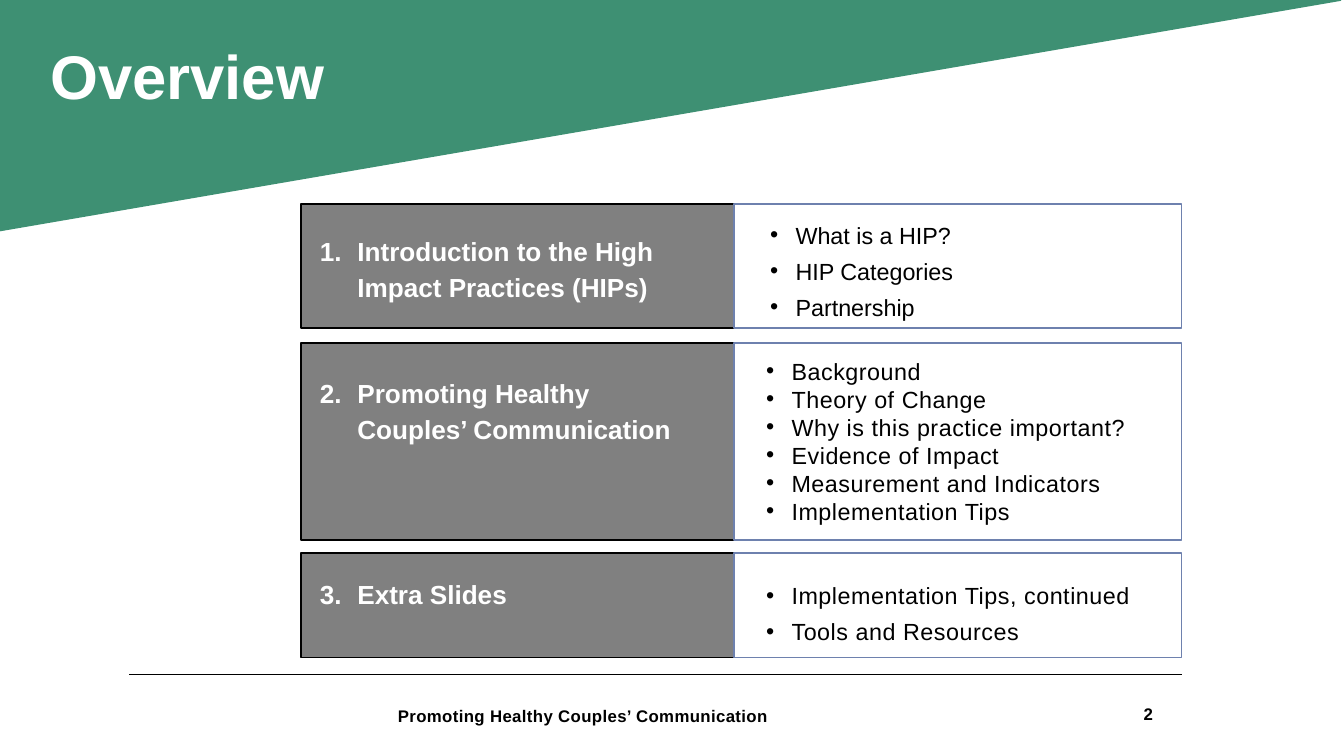
from pptx import Presentation
from pptx.dml.color import RGBColor
from pptx.enum.shapes import MSO_CONNECTOR, MSO_SHAPE
from pptx.enum.text import MSO_ANCHOR, PP_ALIGN
from pptx.oxml.ns import qn
from pptx.util import Cm, Pt
from lxml import etree

GREEN = RGBColor(0x3E, 0x90, 0x73)
GREY = RGBColor(0x80, 0x80, 0x80)
BLUE = RGBColor(0x6E, 0x81, 0xAE)
WHITE = RGBColor(0xFF, 0xFF, 0xFF)
BLACK = RGBColor(0, 0, 0)
RECT = MSO_SHAPE.RECTANGLE
STRAIGHT = MSO_CONNECTOR.STRAIGHT
TOP, MIDDLE = MSO_ANCHOR.TOP, MSO_ANCHOR.MIDDLE
LEFT, RIGHT = PP_ALIGN.LEFT, PP_ALIGN.RIGHT

HEAD_X, HEAD_W = 11.38, 16.36
LIST_X, LIST_W = HEAD_X + HEAD_W, 16.92
WIDE = 38.5

# Row top and height, heading and its top, list place, line spacing,
# letter spacing and items
ROWS = [
    (7.7, 4.7, "Introduction to the High Impact Practices (HIPs)", 8.74,
     (29.11, 8.05), WIDE, 0,
     ["What is a HIP?", "HIP Categories", "Partnership"]),
    (12.98, 7.42, "Promoting Healthy Couples’ Communication", 14.1,
     (28.96, 13.49), None, 0.6,
     ["Background", "Theory of Change", "Why is this practice important?",
      "Evidence of Impact", "Measurement and Indicators",
      "Implementation Tips"]),
    (20.9, 3.96, "Extra Slides", 21.69,
     (28.96, 21.69), WIDE, 0.6,
     ["Implementation Tips, continued", "Tools and Resources"]),
]


def add_frame(slide, x, y, w, h, anchor=TOP):
    """Add a wrapping text box without insets and return its text frame."""
    frame = slide.shapes.add_textbox(Cm(x), Cm(y), Cm(w), Cm(h)).text_frame
    frame.word_wrap = True
    frame.vertical_anchor = anchor
    frame.margin_left = frame.margin_right = 0
    frame.margin_top = frame.margin_bottom = 0
    return frame


def add_run(para, text, size, color, bold=False, gap=0):
    """Add a run; gap is the letter spacing in points."""
    run = para.add_run()
    run.text = text
    font = run.font
    font.name, font.size, font.bold = "Arial", Pt(size), bold
    font.color.rgb = color
    if gap:
        font._element.set("spc", str(round(gap * 100)))


def add_label(slide, box, text, size, color, pitch=None, gap=0,
              align=LEFT, anchor=TOP):
    para = add_frame(slide, *box, anchor).paragraphs[0]
    para.alignment = align
    if pitch:
        para.line_spacing = Pt(pitch)
    add_run(para, text, size, color, True, gap)


def set_mark(para, indent, tag, **attrs):
    """Give a paragraph a hanging indent and a bullet or number."""
    props = para._p.get_or_add_pPr()
    props.set("marL", str(Cm(indent)))
    props.set("indent", str(-Cm(indent)))
    font = etree.SubElement(props, qn("a:buFont"))
    font.set("typeface", "Arial")
    mark = etree.SubElement(props, qn(tag))
    for key, value in attrs.items():
        mark.set(key, value)


def add_panel(slide, x, y, w, h, fill, line):
    panel = slide.shapes.add_shape(RECT, Cm(x), Cm(y), Cm(w), Cm(h))
    paint(panel, fill, line)


def paint(shape, fill, line):
    shape.shadow.inherit = False
    shape.fill.solid()
    shape.fill.fore_color.rgb = fill
    shape.line.color.rgb = line
    shape.line.width = Pt(2)


def add_banner(slide):
    pen = slide.shapes.build_freeform(0, 0)
    pen.add_line_segments([(0, Cm(8.71)), (Cm(50.67), 0)], close=True)
    paint(pen.convert_to_shape(), GREEN, GREEN)


def add_rule(slide):
    rule = slide.shapes.add_connector(
        STRAIGHT, Cm(4.88), Cm(25.5), Cm(LIST_X + LIST_W), Cm(25.5))
    rule.line.color.rgb = BLACK
    rule.line.width = Pt(0.75)
    etree.SubElement(rule._element.spPr, qn("a:effectLst"))


def add_heading(slide, number, text, y):
    para = add_frame(slide, 12.09, y, 14.17, 2.6).paragraphs[0]
    set_mark(para, 1.42, "a:buAutoNum", type="arabicPeriod",
             startAt=str(number))
    para.line_spacing = Pt(WIDE)
    add_run(para, text, 28, WHITE, True)


def add_list(slide, place, height, items, pitch, gap):
    frame = add_frame(slide, *place, 15, height)
    for i, item in enumerate(items):
        para = frame.add_paragraph() if i else frame.paragraphs[0]
        set_mark(para, 0.96, "a:buChar", char="•")
        if pitch:
            para.line_spacing = Pt(pitch)
        add_run(para, item, 25, BLACK, gap=gap)


def add_row(slide, number, row):
    y, h, head, head_y, place, pitch, gap, items = row
    add_panel(slide, HEAD_X, y, HEAD_W, h, GREY, BLACK)
    add_panel(slide, LIST_X, y, LIST_W, h, WHITE, BLUE)
    add_heading(slide, number, head, head_y)
    add_list(slide, place, y + h - place[1], items, pitch, gap)


def main():
    deck = Presentation()
    deck.slide_width, deck.slide_height = Cm(50.8), Cm(28.58)
    slide = deck.slides.add_slide(deck.slide_layouts[6])
    add_banner(slide)
    add_label(slide, (1.9, 1.55, 14.43, 2.72), "Overview", 66, WHITE, 75.6)
    for number, row in enumerate(ROWS, 1):
        add_row(slide, number, row)
    add_rule(slide)
    add_label(slide, (15.04, 26.54, 27.18, 0.84),
              "Promoting Healthy Couples’ Communication", 18, BLACK, 25.2, 0.4)
    add_label(slide, (37.92, 26.47, 5.66, 1.02), "2", 18, BLACK,
              align=RIGHT, anchor=MIDDLE)
    deck.save("out.pptx")


if __name__ == "__main__":
    main()
